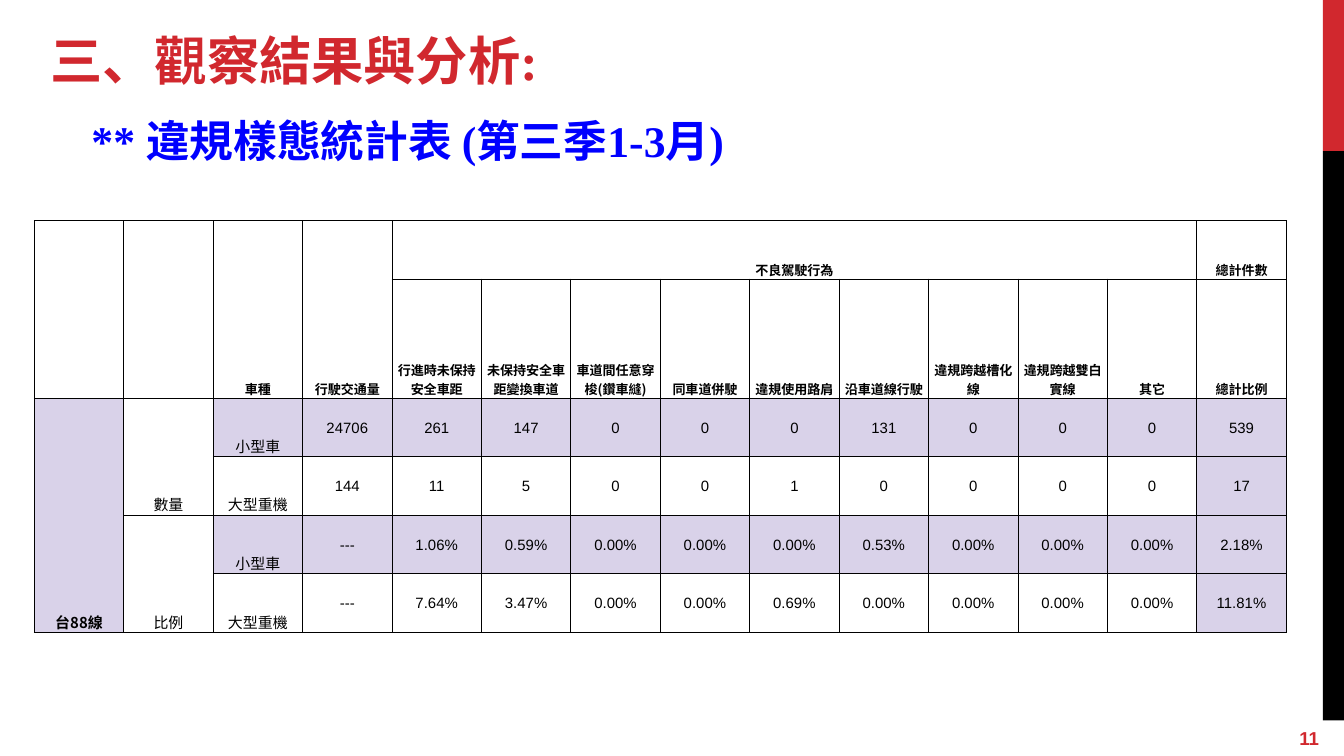
from pptx import Presentation
from pptx.util import Pt
from pptx.dml.color import RGBColor
from pptx.enum.shapes import MSO_SHAPE
from pptx.enum.text import MSO_ANCHOR, PP_ALIGN
from pptx.oxml.ns import qn
from lxml import etree

RECT = MSO_SHAPE.RECTANGLE
TOP, MIDDLE, BOTTOM = MSO_ANCHOR.TOP, MSO_ANCHOR.MIDDLE, MSO_ANCHOR.BOTTOM
LEFT, CENTER = PP_ALIGN.LEFT, PP_ALIGN.CENTER
SERIF, SANS, CJK = "Times New Roman", "Arial", "Noto Sans CJK TC"
RED, BLUE, BLACK, WHITE, LILAC = "D1282E", "0000FF", "000000", "FFFFFF", "D9D2E9"

# Content
TITLE = "三、觀察結果與分析:"
SUBTITLE = "** 違規樣態統計表 (第三季1-3月)"
PAGE = "11"
ROWS = [
    ["", "", "車種", "行駛交通量", "不良駕駛行為"] + [""] * 8 + ["總計件數"],
    ["", "", "", "", "行進時未保持安全車距", "未保持安全車距變換車道",
     "車道間任意穿梭(鑽車縫)", "同車道併駛", "違規使用路肩", "沿車道線行駛",
     "違規跨越槽化線", "違規跨越雙白實線", "其它", "總計比例"],
    ["台88線", "數量", "小型車", "24706", "261", "147", "0", "0", "0", "131",
     "0", "0", "0", "539"],
    ["", "", "大型重機", "144", "11", "5", "0", "0", "1", "0",
     "0", "0", "0", "17"],
    ["", "比例", "小型車", "---", "1.06%", "0.59%", "0.00%", "0.00%", "0.00%",
     "0.53%", "0.00%", "0.00%", "0.00%", "2.18%"],
    ["", "", "大型重機", "---", "7.64%", "3.47%", "0.00%", "0.00%", "0.69%",
     "0.00%", "0.00%", "0.00%", "0.00%", "11.81%"],
]
# Merged areas: first row, first column, last row, last column
MERGES = [(0, c, 1, c) for c in range(4)] + [
    (0, 4, 0, 12), (2, 0, 5, 0), (2, 1, 3, 1), (4, 1, 5, 1)]
HEADER_ROWS, LABEL_COLS, LAST_COL = 2, 3, 13
COL_W = 47.93
ROW_H = [31.4, 63.8] + [31.4] * 4


def rgb(color):
    return RGBColor.from_string(color)


def write(tf, text, size, font, color=BLACK, bold=False, align=LEFT, indent=0):
    p = tf.paragraphs[0]
    p.alignment = align
    if indent:
        p._p.get_or_add_pPr().set("marL", str(Pt(indent)))
    r = p.add_run()
    r.text = text
    r.font.size, r.font.bold, r.font.name = Pt(size), bold, font
    r.font.color.rgb = rgb(color)
    etree.SubElement(r._r.get_or_add_rPr(), qn("a:ea")).set("typeface", CJK)


def add_bar(s, x, y, w, h, color):
    sp = s.shapes.add_shape(RECT, Pt(x), Pt(y), Pt(w), Pt(h))
    sp.shadow.inherit = False
    sp.fill.solid()
    sp.fill.fore_color.rgb = rgb(color)
    sp.line.fill.background()
    return sp


def set_frame(sp, anchor):
    tf = sp.text_frame
    tf.word_wrap, tf.vertical_anchor = True, anchor
    tf.margin_left = tf.margin_right = tf.margin_top = tf.margin_bottom = Pt(7.2)
    return tf


def add_borders(cell):
    tcPr = cell._tc.get_or_add_tcPr()
    for i, side in enumerate(("a:lnL", "a:lnR", "a:lnT", "a:lnB")):
        ln = etree.Element(qn(side), w=str(Pt(0.5)))
        fill = etree.SubElement(ln, qn("a:solidFill"))
        etree.SubElement(fill, qn("a:srgbClr"), val=BLACK)
        tcPr.insert(i, ln)


def is_shaded(row, col):
    if row < HEADER_ROWS or col == 1:
        return False
    return col in (0, LAST_COL) or row % 2 == 0


prs = Presentation()
prs.slide_width, prs.slide_height = Pt(720), Pt(405)
s = prs.slides.add_slide(prs.slide_layouts[6])

# Side bars and page number
add_bar(s, 708.75, 0, 11.25, 81, RED)
add_bar(s, 708.75, 81, 11.25, 324, BLACK)
number = add_bar(s, 689, 386, 31, 19, WHITE)
write(set_frame(number, MIDDLE), PAGE, 10, SANS, RED, bold=True)

# Headings
for text, x, y, size, color, indent in [
        (SUBTITLE, 18.5, 54, 23.4, BLUE, 23.4), (TITLE, 20, 8, 28, RED, 0)]:
    sp = s.shapes.add_textbox(Pt(x), Pt(y), Pt(671), Pt(45))
    write(set_frame(sp, TOP), text, size, SERIF, color, bold=True, indent=indent)

# Table
frame = s.shapes.add_table(len(ROWS), len(ROWS[0]), Pt(18.4), Pt(118.1),
                           Pt(COL_W * len(ROWS[0])), Pt(sum(ROW_H)))
table = frame.table
table.first_row = table.horz_banding = False
for column in table.columns:
    column.width = Pt(COL_W)
for row, height in zip(table.rows, ROW_H):
    row.height = Pt(height)

for i, values in enumerate(ROWS):
    for j, text in enumerate(values):
        cell = table.cell(i, j)
        header, label = i < HEADER_ROWS, j < LABEL_COLS
        cell.margin_left = cell.margin_right = cell.margin_top = Pt(0.7)
        cell.margin_bottom = 0
        cell.vertical_anchor = BOTTOM if header or label else MIDDLE
        if is_shaded(i, j):
            cell.fill.solid()
            cell.fill.fore_color.rgb = rgb(LILAC)
        else:
            cell.fill.background()
        add_borders(cell)
        if text:
            write(cell.text_frame, text, 7 if header else 8,
                  CJK if header or label else SANS,
                  bold=header or j == 0, align=CENTER)

for top, left, bottom, right in MERGES:
    table.cell(top, left).merge(table.cell(bottom, right))

prs.save("out.pptx")
